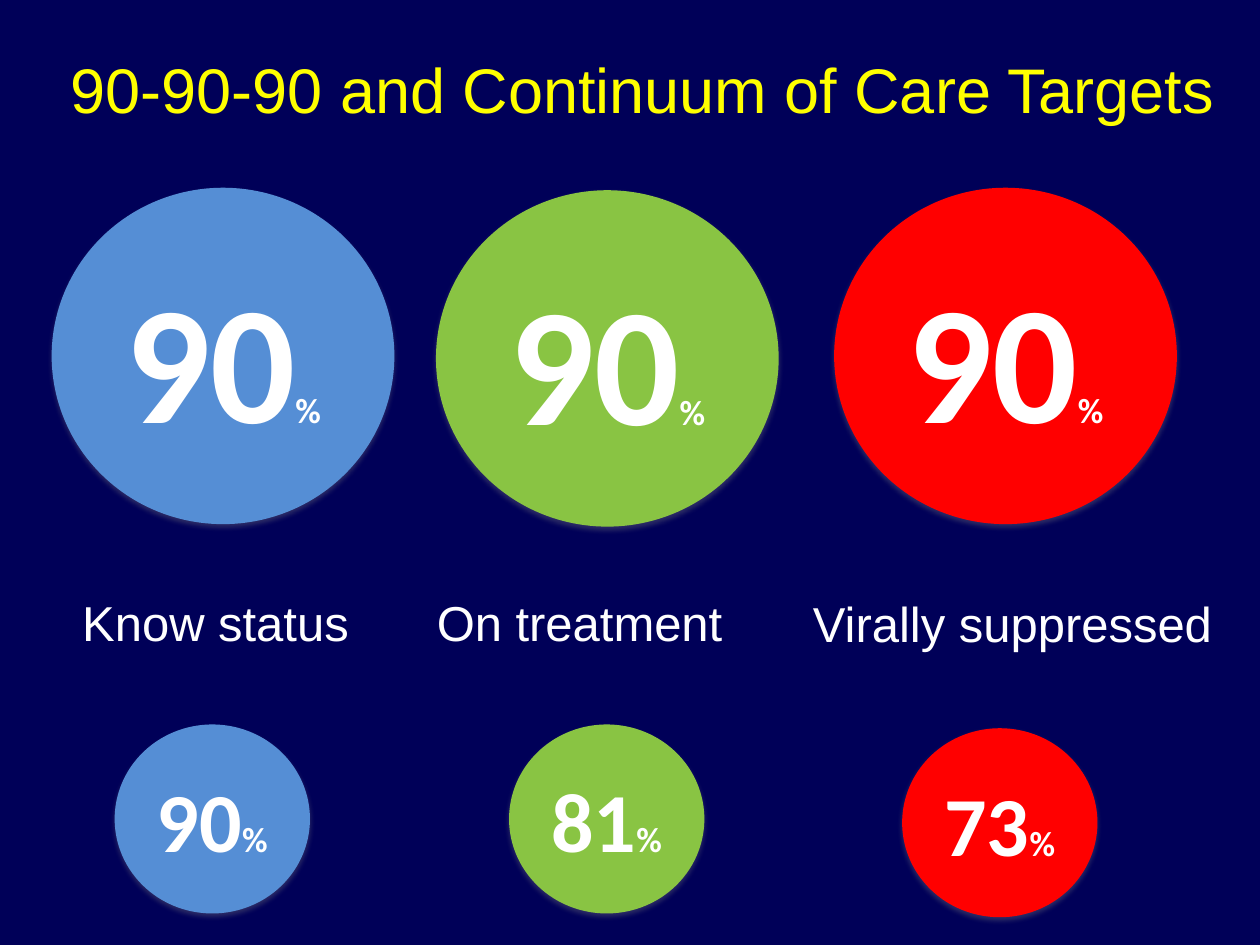
from dataclasses import dataclass

from lxml import etree
from pptx import Presentation
from pptx.dml.color import RGBColor
from pptx.enum.shapes import MSO_SHAPE
from pptx.enum.text import MSO_ANCHOR, MSO_AUTO_SIZE, PP_ALIGN
from pptx.oxml.ns import qn
from pptx.util import Inches, Pt

OVAL = MSO_SHAPE.OVAL
CENTER = PP_ALIGN.CENTER
MIDDLE = MSO_ANCHOR.MIDDLE
GROW = MSO_AUTO_SIZE.SHAPE_TO_FIT_TEXT
TITLE_ONLY = 5


@dataclass(frozen=True)
class Theme:
    background: str = "000058"
    title: str = "FFFF00"
    text: str = "FFFFFF"
    shadow: str = "808080"
    text_font: str = "Arial"
    number_font: str = "Calibri"
    title_size: int = 36
    label_size: int = 28
    target_size: int = 96
    result_size: int = 48
    percent_size: int = 20


@dataclass(frozen=True)
class Stage:
    """One column: each box is left, top, width, height in inches."""
    label: str
    label_box: tuple
    wrap: bool
    color: str
    target_at: tuple
    result: str
    result_at: tuple


THEME = Theme()
TARGET_SIZE = (2.72, 2.67)
RESULT_SIZE = (1.55, 1.5)
TARGET = "90"
STAGES = (
    Stage("Know status", (0.5, 4.65, 2.42, 0.57), True, "558ED5",
          (0.41, 1.49), "90", (0.91, 5.75)),
    Stage("On treatment", (3.35, 4.65, 2.5, 0.57), False, "89C443",
          (3.46, 1.51), "81", (4.04, 5.75)),
    Stage("Virally suppressed", (5.76, 4.66, 4.55, 0.57), True, "FF0000",
          (6.62, 1.49), "73", (7.16, 5.78)),
)


def inches(box):
    return [Inches(value) for value in box]


def style_font(font, name, size, color, bold=False):
    font.name = name
    font.size = Pt(size)
    font.bold = bold
    font.color.rgb = RGBColor.from_string(color)


def add_soft_shadow(shape):
    shape.shadow.inherit = False
    effects = shape._element.spPr.find(qn("a:effectLst"))
    shadow = etree.SubElement(
        effects, qn("a:outerShdw"), blurRad=str(Pt(3.1)), dist=str(Pt(1.8)),
        dir="5400000", rotWithShape="0")
    color = etree.SubElement(shadow, qn("a:srgbClr"), val=THEME.shadow)
    etree.SubElement(color, qn("a:alpha"), val="35000")


def add_percent_circle(page, position, size, color, number, number_size):
    circle = page.shapes.add_shape(OVAL, *inches(position + size))
    circle.fill.solid()
    circle.fill.fore_color.rgb = RGBColor.from_string(color)
    circle.line.fill.background()
    add_soft_shadow(circle)
    circle.text_frame.vertical_anchor = MIDDLE
    para = circle.text_frame.paragraphs[0]
    para.alignment = CENTER
    style_font(para.font, THEME.number_font, number_size, THEME.text, bold=True)
    para.add_run().text = number
    percent = para.add_run()
    percent.text = "%"
    percent.font.size = Pt(THEME.percent_size)


def add_label(page, stage):
    frame = page.shapes.add_textbox(*inches(stage.label_box)).text_frame
    frame.word_wrap = stage.wrap
    frame.auto_size = GROW
    para = frame.paragraphs[0]
    para.text = stage.label
    para.alignment = CENTER
    style_font(para.font, THEME.text_font, THEME.label_size, THEME.text)


def set_title(page, text):
    title = page.shapes.title
    title.left, title.top, title.width, title.height = inches(
        (0.41, 0.08, 9.38, 1.25))
    title.text_frame.vertical_anchor = MIDDLE
    para = title.text_frame.paragraphs[0]
    para.text = text
    para.alignment = CENTER
    style_font(para.font, THEME.text_font, THEME.title_size, THEME.title)


def main():
    deck = Presentation()
    deck.slide_width, deck.slide_height = inches((10, 7.5))
    page = deck.slides.add_slide(deck.slide_layouts[TITLE_ONLY])
    page.background.fill.solid()
    page.background.fill.fore_color.rgb = RGBColor.from_string(THEME.background)

    set_title(page, "90-90-90 and Continuum of Care Targets")
    for stage in STAGES:
        add_percent_circle(page, stage.target_at, TARGET_SIZE, stage.color,
                           TARGET, THEME.target_size)
        add_label(page, stage)
        add_percent_circle(page, stage.result_at, RESULT_SIZE, stage.color,
                           stage.result, THEME.result_size)
    deck.save("out.pptx")


if __name__ == "__main__":
    main()
